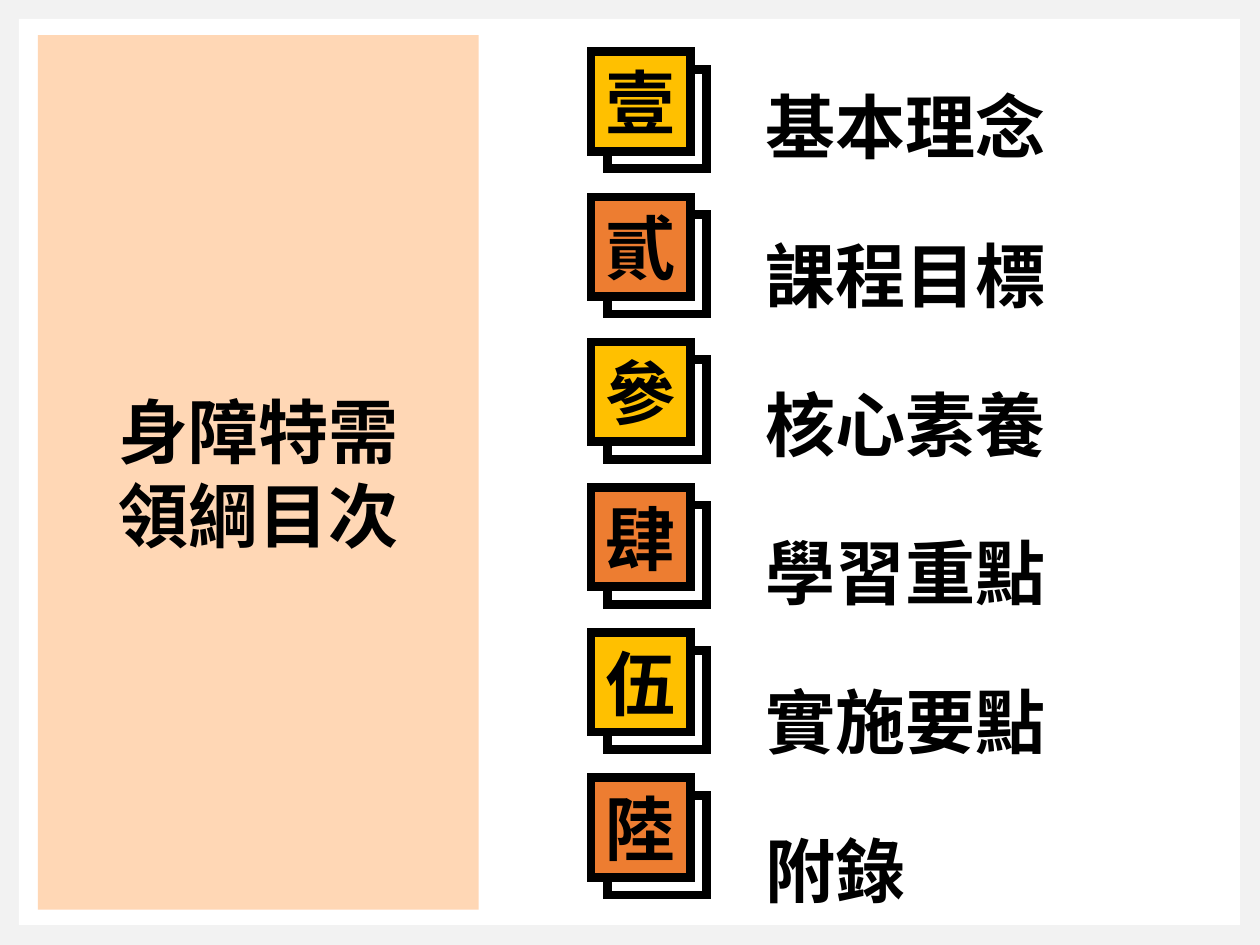
from dataclasses import dataclass

from lxml.etree import SubElement
from pptx import Presentation
from pptx.dml.color import RGBColor
from pptx.enum.shapes import MSO_SHAPE
from pptx.enum.text import MSO_ANCHOR, MSO_AUTO_SIZE, PP_ALIGN
from pptx.oxml.ns import qn
from pptx.util import Inches, Pt

# The slide is a grid of 200 columns by 150 rows of square cells
CELL = 0.05
COLUMNS, ROWS = 200, 150


@dataclass(frozen=True)
class Theme:
    backdrop: str = "F2F2F2"
    paper: str = "FFFFFF"
    panel: str = "FFCDA3"
    panel_opacity: int = 80
    ink: str = "000000"
    tiles: tuple = ("FFC000", "ED7D31")
    font: str = "Noto Sans CJK SC"
    text_size: int = 40
    outline: int = 5
    label_spacing: int = 85


@dataclass(frozen=True)
class Box:
    left: float
    top: float
    width: float
    height: float

    def inches(self):
        sides = (self.left, self.top, self.width, self.height)
        return [Inches(side * CELL) for side in sides]


THEME = Theme()
TITLE = ["身障特需", "領綱目次"]
CHAPTERS = [
    ("壹", "基本理念"),
    ("貳", "課程目標"),
    ("參", "核心素養"),
    ("肆", "學習重點"),
    ("伍", "實施要點"),
    ("陸", "附錄"),
]


def add_rectangle(slide, box, color, outlined=False):
    rectangle = slide.shapes.add_shape(MSO_SHAPE.RECTANGLE, *box.inches())
    rectangle.shadow.inherit = False
    rectangle.fill.solid()
    rectangle.fill.fore_color.rgb = RGBColor.from_string(color)
    if outlined:
        rectangle.line.color.rgb = RGBColor.from_string(THEME.ink)
        rectangle.line.width = Pt(THEME.outline)
        # Sharp outline corners
        SubElement(rectangle.line._get_or_add_ln(), qn("a:miter"), lim="800000")
    else:
        rectangle.line.fill.background()
    return rectangle


def write_lines(frame, lines, align, spacing=None):
    for index, line in enumerate(lines):
        paragraph = frame.add_paragraph() if index else frame.paragraphs[0]
        paragraph.alignment = align
        if spacing:
            paragraph.line_spacing = Pt(spacing)
        run = paragraph.add_run()
        run.text = line
        run.font.size = Pt(THEME.text_size)
        run.font.bold = True
        run.font.name = THEME.font
        run.font.color.rgb = RGBColor.from_string(THEME.ink)
        # East Asian typeface
        SubElement(run.font._element, qn("a:ea"), typeface=THEME.font)


def add_title_panel(slide, box):
    panel = add_rectangle(slide, box, THEME.panel)
    color = panel.fill._xPr.find(qn("a:solidFill"))[0]
    SubElement(color, qn("a:alpha"), val=str(THEME.panel_opacity * 1000))
    panel.text_frame.vertical_anchor = MSO_ANCHOR.MIDDLE
    write_lines(panel.text_frame, TITLE, PP_ALIGN.CENTER)


def add_number_tiles(slide, box, numerals):
    pitch = box.height / len(numerals)
    side = 15.8
    shift_right, shift_down = box.width - side, 2.8
    for index, numeral in enumerate(numerals):
        top = box.top + index * pitch
        # Empty tile behind
        back = Box(box.left + shift_right, top + shift_down, side, side)
        add_rectangle(slide, back, THEME.paper, outlined=True)
        # Numbered tile in front
        color = THEME.tiles[index % len(THEME.tiles)]
        tile = add_rectangle(slide, Box(box.left, top, side, side), color, outlined=True)
        frame = tile.text_frame
        frame.margin_left = frame.margin_right = 0
        frame.margin_top = frame.margin_bottom = 0
        frame.vertical_anchor = MSO_ANCHOR.MIDDLE
        write_lines(frame, [numeral], PP_ALIGN.CENTER)


def add_chapter_names(slide, box, names):
    frame = slide.shapes.add_textbox(*box.inches()).text_frame
    frame.word_wrap = True
    frame.auto_size = MSO_AUTO_SIZE.SHAPE_TO_FIT_TEXT
    write_lines(frame, names, PP_ALIGN.LEFT, THEME.label_spacing)


def main():
    deck = Presentation()
    deck.slide_width = Inches(COLUMNS * CELL)
    deck.slide_height = Inches(ROWS * CELL)
    slide = deck.slides.add_slide(deck.slide_layouts[6])

    # Backdrop and white page
    slide.background.fill.solid()
    slide.background.fill.fore_color.rgb = RGBColor.from_string(THEME.backdrop)
    add_rectangle(slide, Box(3, 3, 193.8, 143.8), THEME.paper)

    # Title on the left, chapters on the right
    numerals, names = zip(*CHAPTERS)
    add_title_panel(slide, Box(6, 5.6, 70, 138.8))
    add_number_tiles(slide, Box(93.8, 8.2, 18.4, 138.3), numerals)
    add_chapter_names(slide, Box(119.6, 2, 82.2, 141.6), names)

    deck.save("out.pptx")


if __name__ == "__main__":
    main()
